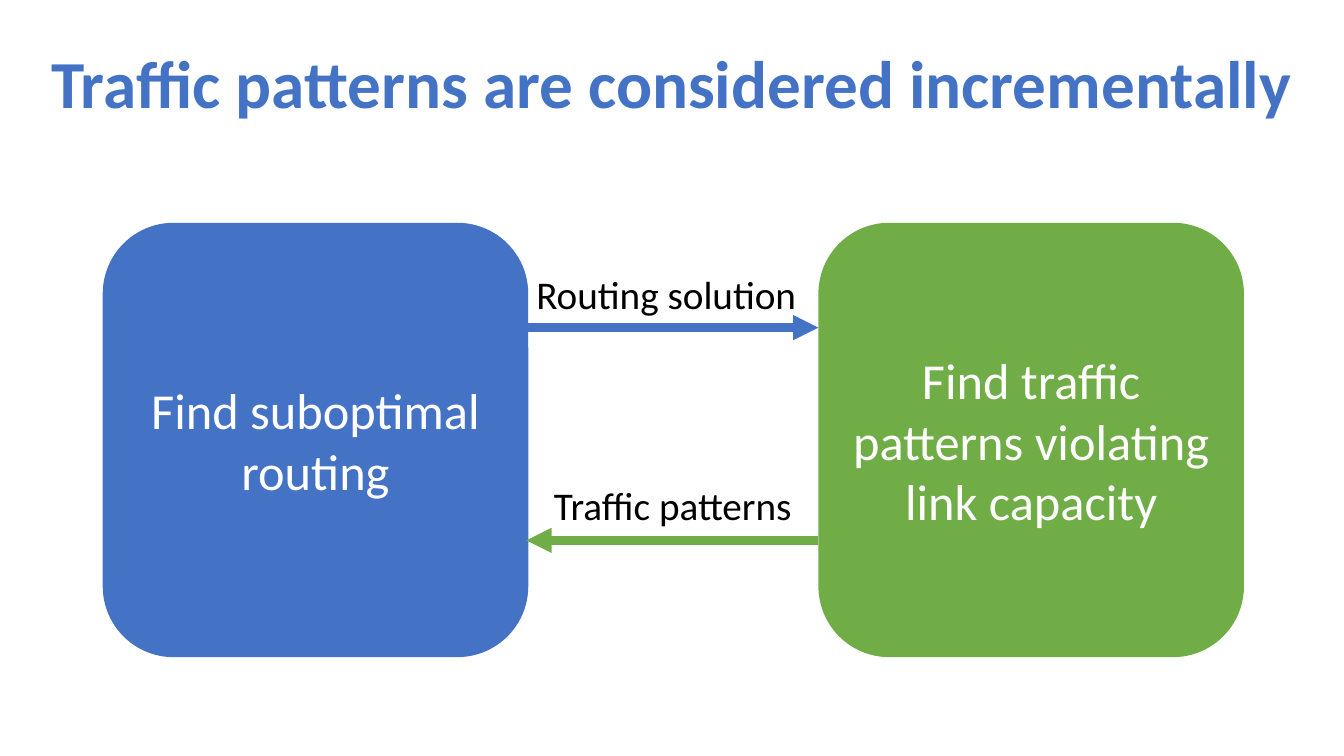
from pptx import Presentation
from pptx.dml.color import RGBColor
from pptx.enum.shapes import MSO_CONNECTOR, MSO_SHAPE
from pptx.enum.text import MSO_ANCHOR, PP_ALIGN
from pptx.oxml.ns import qn
from pptx.util import Pt
from lxml import etree

BLUE = RGBColor(0x44, 0x72, 0xC4)
GREEN = RGBColor(0x70, 0xAD, 0x47)
WHITE = RGBColor(0xFF, 0xFF, 0xFF)
BLACK = RGBColor(0x00, 0x00, 0x00)

ROUNDED = MSO_SHAPE.ROUNDED_RECTANGLE
STRAIGHT = MSO_CONNECTOR.STRAIGHT
LEFT, CENTER = PP_ALIGN.LEFT, PP_ALIGN.CENTER
TOP, MIDDLE = MSO_ANCHOR.TOP, MSO_ANCHOR.MIDDLE


class SlideBuilder:
    font_name = "Calibri"
    arrow_width = 6

    def __init__(self, slide):
        self.slide = slide

    def fill_text(self, shape, text, size, color, align, anchor, bold=False, spacing=1.0):
        frame = shape.text_frame
        frame.word_wrap = True
        frame.vertical_anchor = anchor
        paragraph = frame.paragraphs[0]
        paragraph.alignment = align
        paragraph.line_spacing = spacing
        run = paragraph.add_run()
        run.text = text
        run.font.name = self.font_name
        run.font.size = Pt(size)
        run.font.bold = bold
        run.font.color.rgb = color

    def label(self, left, top, width, height, text, size, color=BLACK,
              align=LEFT, anchor=TOP, **style):
        shape = self.slide.shapes.add_textbox(Pt(left), Pt(top), Pt(width), Pt(height))
        self.fill_text(shape, text, size, color, align, anchor, **style)

    def box(self, left, top, width, height, text, fill):
        shape = self.slide.shapes.add_shape(ROUNDED, Pt(left), Pt(top), Pt(width), Pt(height))
        shape.shadow.inherit = False
        shape.fill.solid()
        shape.fill.fore_color.rgb = fill
        shape.line.fill.background()
        self.fill_text(shape, text, 36, WHITE, CENTER, MIDDLE)

    def arrow(self, start, end, y, color):
        connector = self.slide.shapes.add_connector(STRAIGHT, Pt(start), Pt(y), Pt(end), Pt(y))
        connector.line.color.rgb = color
        connector.line.width = Pt(self.arrow_width)
        properties = connector.element.spPr
        head = etree.SubElement(properties.find(qn("a:ln")), qn("a:tailEnd"))
        head.set("type", "triangle")
        etree.SubElement(properties, qn("a:effectLst"))


def main():
    presentation = Presentation()
    presentation.slide_width = Pt(960)
    presentation.slide_height = Pt(540)
    builder = SlideBuilder(presentation.slides.add_slide(presentation.slide_layouts[6]))

    # Title
    builder.label(22.3, 10.8, 915, 102.2, "Traffic patterns are considered incrementally",
                  48, BLUE, CENTER, MIDDLE, bold=True, spacing=0.9)

    # The two steps of the loop
    box_top, box_width, box_height = 159.1, 304, 310.3
    routing_left, traffic_left = 73.4, 584.6
    builder.box(routing_left, box_top, box_width, box_height,
                "Find suboptimal routing", BLUE)
    builder.box(traffic_left, box_top, box_width, box_height,
                "Find traffic patterns violating link capacity", GREEN)

    # What each step passes to the other
    gap_left = 376
    builder.arrow(gap_left, traffic_left, 234, BLUE)
    builder.label(gap_left, 189.4, 209, 41, "Routing solution", 28)
    builder.arrow(traffic_left, gap_left, 386, GREEN)
    builder.label(gap_left, 340.6, 209, 41, "Traffic patterns", 28, align=CENTER)

    presentation.save("out.pptx")


if __name__ == "__main__":
    main()
